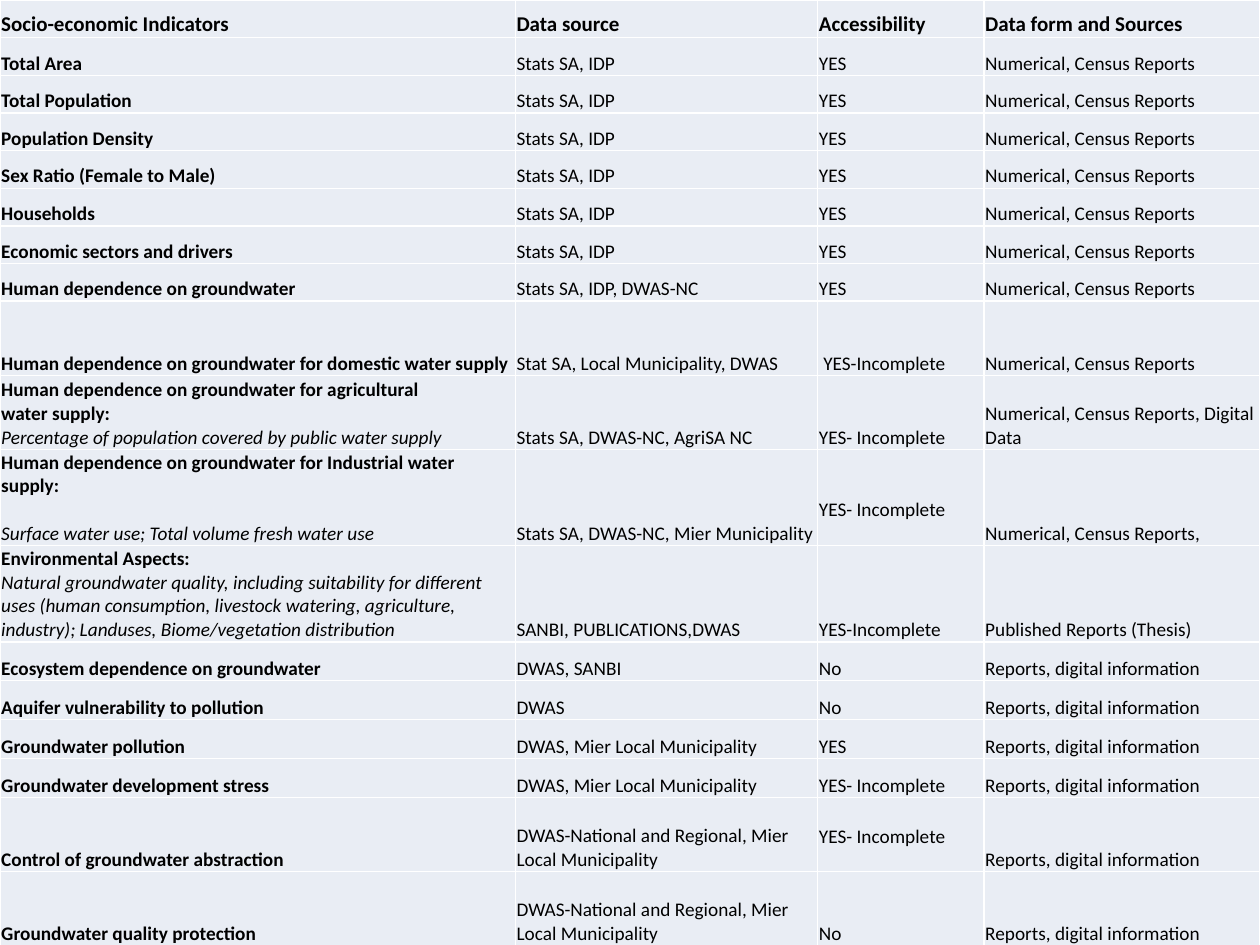
from lxml.etree import SubElement
from pptx import Presentation
from pptx.dml.color import RGBColor
from pptx.enum.text import MSO_ANCHOR
from pptx.oxml.ns import qn
from pptx.util import Inches, Pt

WIDTH, HEIGHT = 10, 7.5
COLORS = {"cell": "E9EDF4", "border": "FFFFFF", "text": "000000"}
BACKGROUND = [(0, "03D4A8"), (25, "21D6E0"), (75, "0087E6"), (100, "005CBF")]
FONT = "Calibri"
LINE = 13.4  # height in points of one line of body text

# Column and row sizes, as shares of the slide
COLS = [4.09, 2.4, 1.32, 2.19]
ROWS = [0.3] * 8 + [0.59] * 2 + [0.76] * 2 + [0.31] * 4 + [0.59] * 2

STATS, CENSUS = "Stats SA, IDP", "Numerical, Census Reports"
MIER, REPORTS = "DWAS, Mier Local Municipality", "Reports, digital information"
REGIONAL = "DWAS-National and Regional, Mier Local Municipality"
PARTIAL = "YES- Incomplete"

HEADER = ["Socio-economic Indicators", "Data source", "Accessibility",
          "Data form and Sources"]
BASIC = ["Total Area", "Total Population", "Population Density",
         "Sex Ratio (Female to Male)", "Households",
         "Economic sectors and drivers"]
# An indicator is its bold lines, then an optional italic note after "|"
INDICATORS = [[name, STATS, "YES", CENSUS] for name in BASIC] + [
    ["Human dependence on groundwater", "Stats SA, IDP, DWAS-NC", "YES", CENSUS],
    ["Human dependence on groundwater for domestic water supply",
     "Stat SA, Local Municipality, DWAS", " YES-Incomplete", CENSUS],
    ["Human dependence on groundwater for agricultural\nwater supply:"
     "|Percentage of population covered by public water supply",
     "Stats SA, DWAS-NC, AgriSA NC", PARTIAL,
     "Numerical, Census Reports, Digital Data"],
    ["Human dependence on groundwater for Industrial water supply:"
     "|Surface water use; Total volume fresh water use",
     "Stats SA, DWAS-NC, Mier Municipality", PARTIAL,
     "Numerical, Census Reports,"],
    ["Environmental Aspects:"
     "|Natural groundwater quality, including suitability for different uses "
     "(human consumption, livestock watering, agriculture, industry); "
     "Landuses, Biome/vegetation distribution",
     "SANBI, PUBLICATIONS,DWAS", "YES-Incomplete", "Published Reports (Thesis)"],
    ["Ecosystem dependence on groundwater", "DWAS, SANBI", "No", REPORTS],
    ["Aquifer vulnerability to pollution", "DWAS", "No", REPORTS],
    ["Groundwater pollution", MIER, "YES", REPORTS],
    ["Groundwater development stress", MIER, PARTIAL, REPORTS],
    ["Control of groundwater abstraction", REGIONAL, PARTIAL, REPORTS],
    ["Groundwater quality protection", REGIONAL, "No", REPORTS],
]
INDUSTRIAL, ABSTRACTION, ACCESS = 10, 16, 2  # table positions


def set_background(s):
    fill = s.background.fill
    fill.gradient()
    fill.gradient_angle = 270
    stops = next(s.element.iter(qn("a:gsLst")))
    for stop in list(stops):
        stops.remove(stop)
    for share, color in BACKGROUND:
        stop = SubElement(stops, qn("a:gs"), pos=str(share * 1000))
        SubElement(stop, qn("a:srgbClr"), val=color)


def add_borders(cell):
    tcPr = cell._tc.get_or_add_tcPr()
    for i, side in enumerate(("lnL", "lnR", "lnT", "lnB")):
        ln = tcPr.makeelement(qn(f"a:{side}"), {"w": str(Pt(1))})
        tcPr.insert(i, ln)
        fill = SubElement(ln, qn("a:solidFill"))
        SubElement(fill, qn("a:srgbClr"), val=COLORS["border"])


def format_cell(cell):
    cell.fill.solid()
    cell.fill.fore_color.rgb = RGBColor.from_string(COLORS["cell"])
    cell.vertical_anchor = MSO_ANCHOR.BOTTOM
    cell.margin_left = cell.margin_right = cell.margin_top = Inches(0.01)
    cell.margin_bottom = 0
    add_borders(cell)


def add_run(p, text, size, bold=False, italic=False):
    r = p.add_run()
    r.text = text
    r.font.name, r.font.size = FONT, Pt(size)
    r.font.bold, r.font.italic = bold, italic
    r.font.color.rgb = RGBColor.from_string(COLORS["text"])


def write_cell(cell, text, size, bold):
    title, _, note = text.partition("|")
    tf = cell.text_frame
    for i, line in enumerate(title.split("\n")):
        p = tf.add_paragraph() if i else tf.paragraphs[0]
        add_run(p, line, size, bold)
    if note:
        add_run(tf.add_paragraph(), note, size, italic=True)


def add_indicator_table(s):
    data = [HEADER] + INDICATORS
    table = s.shapes.add_table(len(ROWS), len(COLS), 0, 0,
                               Inches(WIDTH), Inches(HEIGHT)).table
    for col, share in zip(table.columns, COLS):
        col.width = Inches(WIDTH * share / sum(COLS))
    for row, share in zip(table.rows, ROWS):
        row.height = Inches(HEIGHT * share / sum(ROWS))
    for i, texts in enumerate(data):
        for j, text in enumerate(texts):
            cell = table.cell(i, j)
            format_cell(cell)
            write_cell(cell, text, 11 if i else 12, bold=i == 0 or j == 0)
    # One line of room above the industrial note and below two raised entries
    note = table.cell(INDUSTRIAL, 0).text_frame.paragraphs[-1]
    note.space_before = Pt(LINE)
    for i in (INDUSTRIAL, ABSTRACTION):
        table.cell(i, ACCESS).margin_bottom = Pt(LINE)


def main():
    prs = Presentation()
    prs.slide_width, prs.slide_height = Inches(WIDTH), Inches(HEIGHT)
    s = prs.slides.add_slide(prs.slide_layouts[6])
    set_background(s)
    add_indicator_table(s)
    prs.save("out.pptx")


if __name__ == "__main__":
    main()
